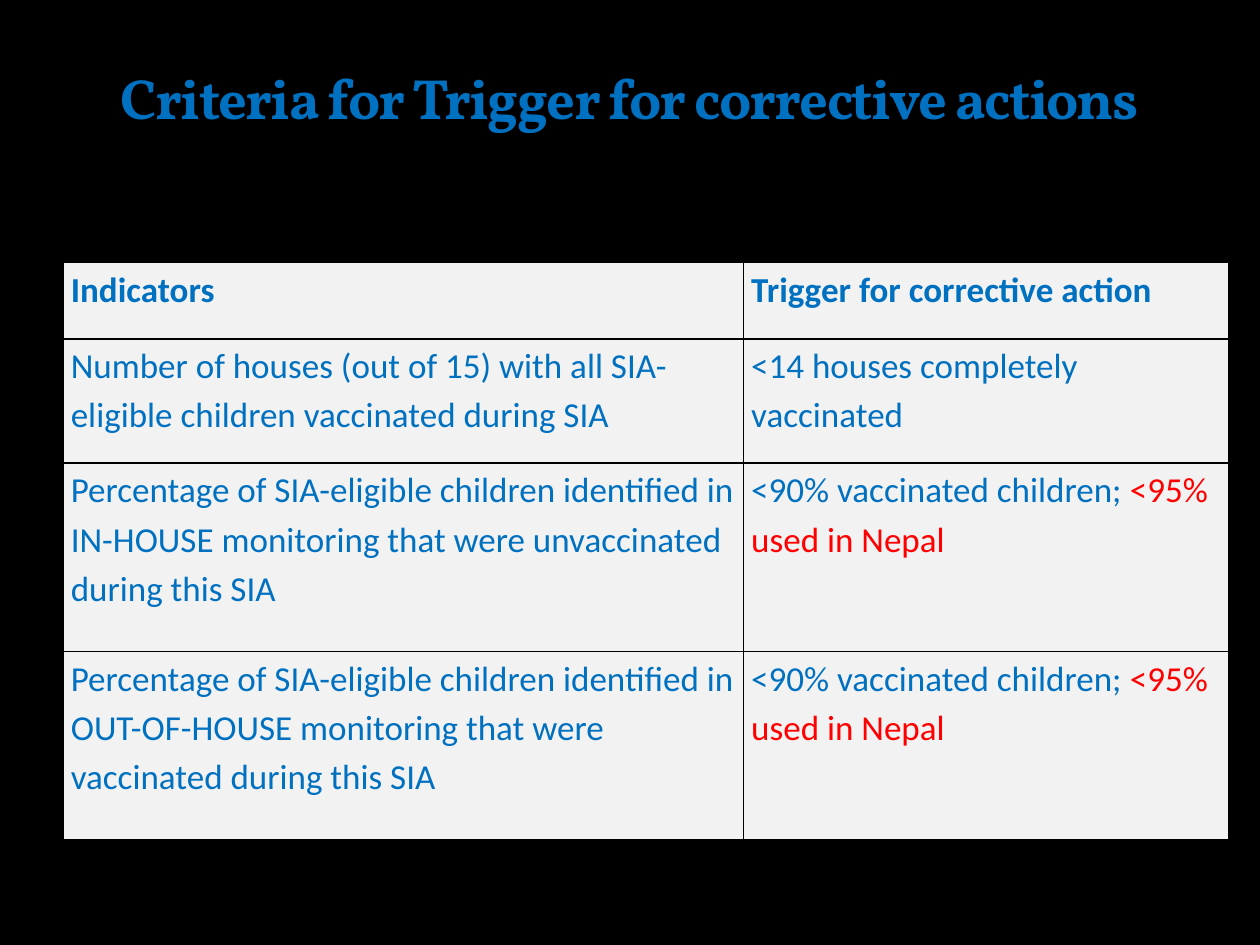
from lxml import etree
from pptx import Presentation
from pptx import util as u
from pptx.dml import color as c
from pptx.enum import text
from pptx.oxml import ns

BLACK = c.RGBColor(0x00, 0x00, 0x00)
BLUE = c.RGBColor(0x00, 0x70, 0xC0)
RED = c.RGBColor(0xFF, 0x00, 0x00)
LIGHT_GRAY = c.RGBColor(0xF2, 0xF2, 0xF2)
OLIVE = c.RGBColor(0x3C, 0x44, 0x22)


def add_run(paragraph, words, font_name, size, color, bold):
    run = paragraph.add_run()
    run.text = words
    run.font.name = font_name
    run.font.size = u.Pt(size)
    run.font.bold = bold
    run.font.color.rgb = color
    return run


def make_line(tag, width, color):
    line = etree.Element(ns.qn(tag), w=str(u.Pt(width)))
    fill = etree.SubElement(line, ns.qn("a:solidFill"))
    etree.SubElement(fill, ns.qn("a:srgbClr"), val=str(color))
    return line


presentation = Presentation()
presentation.slide_width = u.Pt(720)
presentation.slide_height = u.Pt(540)
slide = presentation.slides.add_slide(presentation.slide_layouts[6])
slide.background.fill.solid()
slide.background.fill.fore_color.rgb = BLACK

title = slide.shapes.add_textbox(u.Pt(36), u.Pt(12.24), u.Pt(648), u.Pt(66.24))
title_frame = title.text_frame
title_frame.word_wrap = True
title_frame.vertical_anchor = text.MSO_ANCHOR.BOTTOM
title_paragraph = title_frame.paragraphs[0]
title_paragraph.alignment = text.PP_ALIGN.CENTER
title_run = add_run(title_paragraph, "Criteria for Trigger for corrective actions",
                    "Vollkorn", 32.4, BLUE, True)
title_properties = title_run.font._element
title_properties.set("spc", "-100")
title_properties.insert(0, make_line("a:ln", 0.25, OLIVE))

rows = [
    (["Indicators"], ["Trigger for corrective action"]),
    (["Number of houses (out of 15) with all SIA-eligible children vaccinated during SIA"],
     ["<14 houses completely vaccinated"]),
    (["Percentage of SIA-eligible children identified in IN-HOUSE monitoring "
      "that were unvaccinated during this SIA"],
     ["<90% vaccinated children; ", "<95% used in Nepal"]),
    (["Percentage of SIA-eligible children identified in OUT-OF-HOUSE monitoring "
      "that were vaccinated during this SIA"],
     ["<90% vaccinated children;", " <95% used in Nepal"]),
]
column_widths = [388.8, 277.2]
row_heights = [43.6, 71, 107.8, 107.8]

table = slide.shapes.add_table(len(rows), len(column_widths), u.Pt(36), u.Pt(150),
                               u.Pt(sum(column_widths)), u.Pt(sum(row_heights))).table
table.horz_banding = False
for column, width in zip(table.columns, column_widths):
    column.width = u.Pt(width)

for row_index, (contents, height) in enumerate(zip(rows, row_heights)):
    table.rows[row_index].height = u.Pt(height)
    for column_index, runs in enumerate(contents):
        cell = table.cell(row_index, column_index)
        cell.margin_left = cell.margin_right = u.Pt(4.5)
        cell.margin_top = cell.margin_bottom = 0
        paragraph = cell.text_frame.paragraphs[0]
        paragraph.line_spacing = 1.15
        paragraph.space_after = u.Pt(10)
        for words, color in zip(runs, (BLUE, RED)):
            add_run(paragraph, words, "Calibri", 20, color, row_index == 0)
        cell_properties = cell._tc.get_or_add_tcPr()
        for side in ("a:lnL", "a:lnR", "a:lnT", "a:lnB"):
            cell_properties.append(make_line(side, 1, BLACK))
        cell.fill.solid()
        cell.fill.fore_color.rgb = LIGHT_GRAY

presentation.save("out.pptx")
